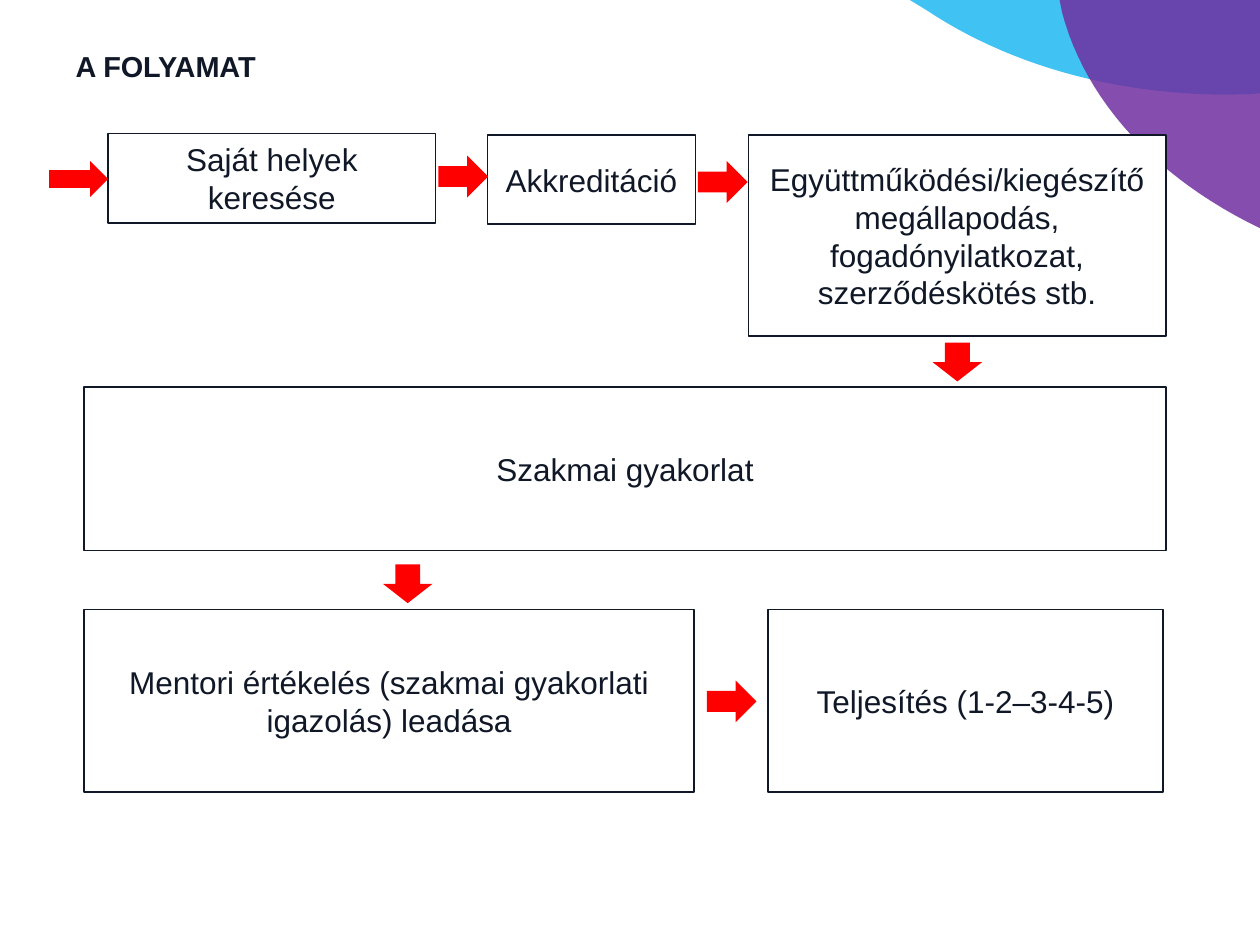
"""Builds the process flow slide."""
from dataclasses import dataclass

from lxml import etree
from pptx import Presentation
from pptx import util as u
from pptx.dml.color import RGBColor
from pptx.enum import shapes, text
from pptx.oxml import ns


@dataclass(frozen=True)
class Theme:
    ink: str = "101827"
    paper: str = "FFFFFF"
    arrow: str = "FF0000"
    cyan: str = "00B0F0"
    violet: str = "7030A0"
    font: str = "Arial"
    head: float = 16.5
    body: float = 18


def bend(a, b, c, d, steps=24):
    """Return points along a cubic curve, its start left out."""
    points = []
    for i in range(1, steps + 1):
        t = i / steps
        s = 1 - t
        points.append(tuple(
            s**3 * p + 3 * s * s * t * q + 3 * s * t * t * r + t**3 * v
            for p, q, r, v in zip(a, b, c, d)))
    return points


class Deck:
    def __init__(self, theme):
        self.theme = theme
        self.prs = Presentation()
        self.prs.slide_width, self.prs.slide_height = u.Cm(25.4), u.Cm(19.05)
        self.slide = self.prs.slides.add_slide(self.prs.slide_layouts[5])
        self.paint(self.slide.background.fill, theme.paper)

    def paint(self, fill, color):
        fill.solid()
        fill.fore_color.rgb = RGBColor.from_string(color)

    def label(self, frame, words, size, bold=False, align=text.PP_ALIGN.CENTER):
        frame.word_wrap = True
        frame.auto_size = text.MSO_AUTO_SIZE.NONE
        frame.vertical_anchor = text.MSO_ANCHOR.MIDDLE
        para = frame.paragraphs[0]
        para.alignment = align
        run = para.add_run()
        run.text = words
        run.font.name, run.font.size, run.font.bold = self.theme.font, u.Pt(size), bold
        run.font.color.rgb = RGBColor.from_string(self.theme.ink)
        return para

    def title(self, words, x, y, w, h):
        head = self.slide.shapes.title
        head.left, head.top, head.width, head.height = map(u.Cm, (x, y, w, h))
        para = self.label(head.text_frame, words, self.theme.head, True, text.PP_ALIGN.LEFT)
        para.line_spacing = 0.7

    def wave(self, points, color, alpha):
        first, *rest = [(u.Cm(x), u.Cm(y)) for x, y in points]
        edge = self.slide.shapes.build_freeform(*first)
        edge.add_line_segments(rest, close=True)
        shape = edge.convert_to_shape()
        shape.shadow.inherit = False
        self.paint(shape.fill, color)
        shape.line.fill.background()
        tint = shape.element.find(".//" + ns.qn("a:srgbClr"))
        etree.SubElement(tint, ns.qn("a:alpha"), val=str(alpha * 1000))

    def shape(self, kind, color, x, y, w, h):
        item = self.slide.shapes.add_shape(kind, *map(u.Cm, (x, y, w, h)))
        item.shadow.inherit = False
        self.paint(item.fill, color)
        return item

    def box(self, words, *place):
        item = self.shape(shapes.MSO_SHAPE.RECTANGLE, self.theme.paper, *place)
        item.line.width = u.Pt(1)
        self.paint(item.line.fill, self.theme.ink)
        self.label(item.text_frame, words, self.theme.body)

    def arrow(self, kind, *place):
        self.shape(kind, self.theme.arrow, *place).line.fill.background()


def main():
    theme = Theme()
    deck = Deck(theme)
    deck.title("A FOLYAMAT", 1.27, 1.02, 22.86, 0.79)

    cyan = [(18.34, 0), (25.4, 0), (25.4, 1.88), (25.2, 1.9), (24.74, 1.91)]
    cyan += bend(cyan[-1], (22.4, 1.91), (20.27, 1.27), (18.67, 0.2))
    deck.wave(cyan, theme.cyan, 75)
    violet = [(21.36, 0), (25.4, 0), (25.4, 4.6)]
    violet += bend(violet[-1], (23.34, 3.61), (21.89, 2.06), (21.41, 0.25))
    deck.wave(violet, theme.violet, 85)

    for step in (
        ("Saját helyek keresése", 2.18, 2.69, 6.6, 1.8),
        ("Akkreditáció", 9.83, 2.72, 4.19, 1.8),
        ("Együttműködési/kiegészítő megállapodás, fogadónyilatkozat, "
         "szerződéskötés stb.", 15.09, 2.72, 8.41, 4.06),
        ("Szakmai gyakorlat", 1.7, 7.8, 21.8, 3.3),
        ("Mentori értékelés (szakmai gyakorlati igazolás) leadása",
         1.7, 12.29, 12.29, 3.68),
        ("Teljesítés (1-2–3-4-5)", 15.49, 12.29, 7.95, 3.68),
    ):
        deck.box(*step)

    right, down = shapes.MSO_SHAPE.RIGHT_ARROW, shapes.MSO_SHAPE.DOWN_ARROW
    deck.arrow(right, 0.99, 3.25, 1.19, 0.72)
    for x, y in ((8.84, 3.14), (14.07, 3.25), (14.25, 13.72)):
        deck.arrow(right, x, y, 1, 0.84)
    for x, y in ((18.8, 6.91), (7.72, 11.38)):
        deck.arrow(down, x, y, 1, 0.78)
    deck.prs.save("out.pptx")


if __name__ == "__main__":
    main()
